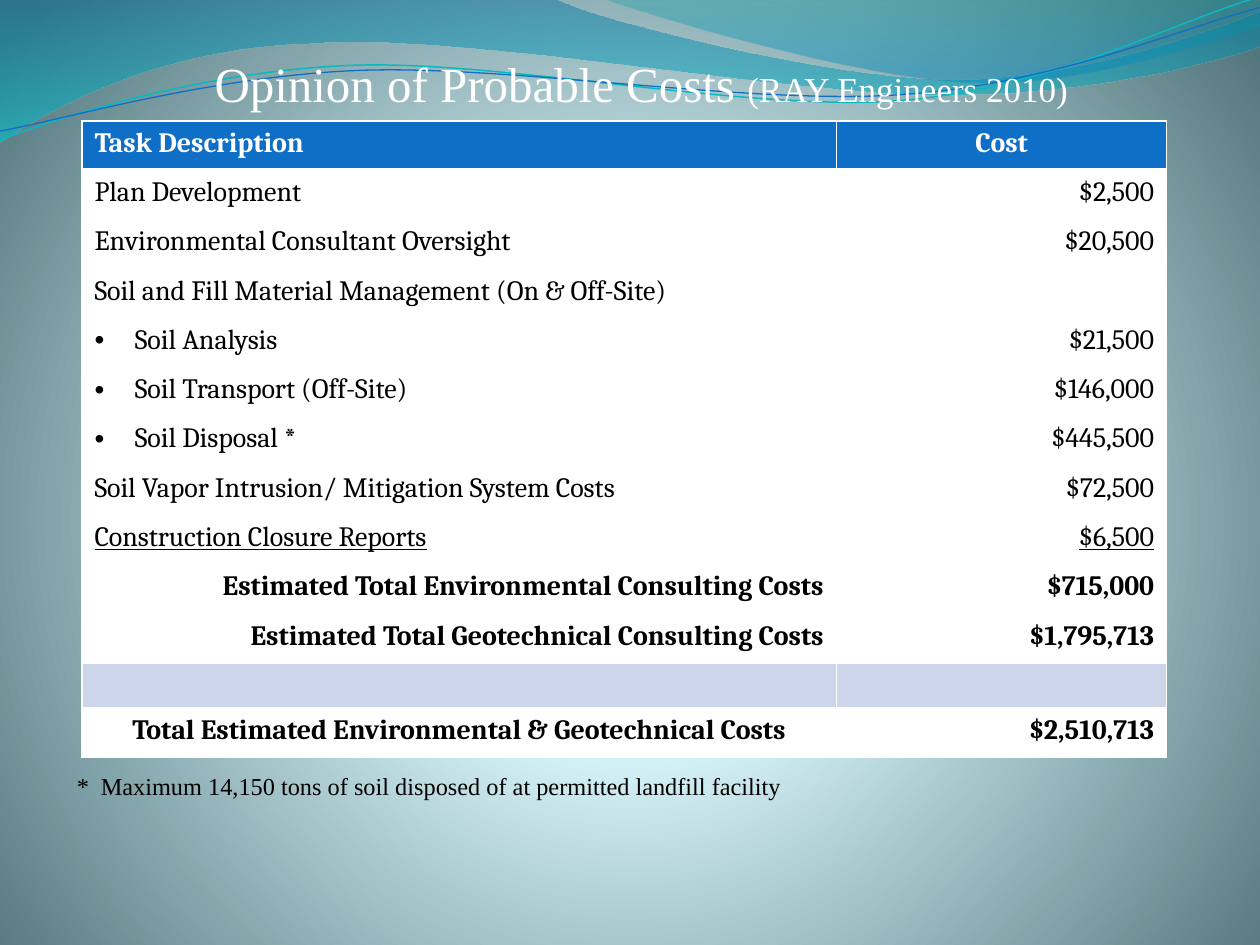
import lxml.etree
import pptx
import pptx.dml.color
import pptx.enum.text
import pptx.oxml.ns
import pptx.util

RGB = pptx.dml.color.RGBColor
Inches = pptx.util.Inches
Pt = pptx.util.Pt
qn = pptx.oxml.ns.qn
ALIGN = pptx.enum.text.PP_ALIGN
ANCHOR = pptx.enum.text.MSO_ANCHOR

WHITE = RGB(0xFF, 0xFF, 0xFF)
BLACK = RGB(0x00, 0x00, 0x00)
BLUE = RGB(0x0F, 0x6F, 0xC6)
TURQUOISE = RGB(0x0A, 0xB8, 0xBF)
PALE_BLUE = RGB(0xCC, 0xD5, 0xEA)
# Gradient stops: position, colour, opacity (all in percent)
BACKDROP = [(0, RGB(0xDE, 0xFB, 0xFF), 100), (25, RGB(0xDD, 0xFA, 0xFF), 100),
            (100, RGB(0x52, 0x76, 0x7C), 100)]
WAVE = [(0, RGB(0x00, 0x74, 0xA1), 45), (100, RGB(0x00, 0xC6, 0xCF), 55)]
CREST = [(0, RGB(0x00, 0xA1, 0xA9), 30), (80, RGB(0x00, 0x8B, 0xBF), 45)]

BODY_FONT, TITLE_FONT = "Cambria", "Times New Roman"
ROW_HEIGHT, SPACER_HEIGHT = Pt(28.15), Pt(25.6)
COLUMN_WIDTHS = (5.99, 2.62)
HANG = 0.32

# Description, cost, style
COSTS = [
    ("Task Description", "Cost", "header"),
    ("Plan Development", "$2,500", "item"),
    ("Environmental Consultant Oversight", "$20,500", "item"),
    ("Soil and Fill Material Management (On & Off-Site)", "", "item"),
    ("Soil Analysis", "$21,500", "bullet"),
    ("Soil Transport (Off-Site)", "$146,000", "bullet"),
    ("Soil Disposal *", "$445,500", "bullet"),
    ("Soil Vapor Intrusion/ Mitigation System Costs", "$72,500", "item"),
    ("Construction Closure Reports", "$6,500", "last item"),
    ("Estimated Total Environmental Consulting Costs", "$715,000", "subtotal"),
    ("Estimated Total Geotechnical Consulting Costs", "$1,795,713", "subtotal"),
    ("", "", "spacer"),
    ("Total Estimated Environmental & Geotechnical Costs", "$2,510,713", "total"),
]
FILLS = {"header": BLUE, "spacer": PALE_BLUE}
BOLD = ("header", "subtotal", "total")
ALIGNMENTS = {"header": (ALIGN.LEFT, ALIGN.CENTER),
              "subtotal": (ALIGN.RIGHT, ALIGN.RIGHT),
              "total": (ALIGN.CENTER, ALIGN.RIGHT)}


def child(parent, tag, **attributes):
    node = lxml.etree.SubElement(parent, qn(tag))
    for name, value in attributes.items():
        node.set(name, str(value))
    return node


def set_gradient(fill, owner, stops, radial=False):
    fill.gradient()
    gradient = next(owner.iter(qn("a:gradFill")))
    for old in list(gradient):
        gradient.remove(old)
    stop_list = child(gradient, "a:gsLst")
    for position, colour, opacity in stops:
        stop = child(stop_list, "a:gs", pos=position * 1000)
        child(child(stop, "a:srgbClr", val=colour), "a:alpha", val=opacity * 1000)
    if radial:
        focus = child(gradient, "a:path", path="circle")
        child(focus, "a:fillToRect", l=10000, t=110000, r=10000, b=100000)
    else:
        child(gradient, "a:lin", ang=5400000, scaled=1)


def add_outline(slide, start, segments, closed):
    """Draw segments of one point (a line) or three points (a curve)."""
    points = [start] + [point for segment in segments for point in segment]
    emu = [(Inches(x), Inches(y)) for x, y in points]
    builder = slide.shapes.build_freeform(*emu[0], scale=1.0)
    builder.add_line_segments(emu[1:], close=closed)
    outline = builder.convert_to_shape()
    outline.shadow.inherit = False
    lines = iter(list(outline.element.iter(qn("a:lnTo"))))
    for segment in segments:
        steps = [next(lines) for _ in segment]
        if len(steps) == 3:
            curve = lxml.etree.Element(qn("a:cubicBezTo"))
            steps[0].addprevious(curve)
            for step in steps:
                curve.append(step[0])
                step.getparent().remove(step)
    return outline


def add_wave(slide, start, segments, stops):
    wave = add_outline(slide, start, segments, True)
    set_gradient(wave.fill, wave.element, stops)
    wave.line.fill.background()


def add_ripple(slide, start, segments, colour, width):
    ripple = add_outline(slide, start, segments, False)
    ripple.fill.background()
    ripple.line.color.rgb = colour
    ripple.line.width = Pt(width)


def add_waves(slide):
    add_wave(slide, (0, 0), [
        [(4.4, -0.01)],
        [(4.76, 0.17), (6.64, 0.63), (7.58, 0.63)],
        [(8.53, 0.63), (9.58, 0.26), (10, 0.09)],
        [(10.01, 0.36)],
        [(9.83, 0.44), (8.7, 0.76), (7.46, 0.75)],
        [(6.22, 0.75), (3.82, 0.28), (2.57, 0.34)],
        [(1.29, 0.36), (0.46, 0.83), (-0.01, 1.13)]], WAVE)
    add_wave(slide, (4.79, -0.01), [
        [(5.09, 0.11), (6.82, 0.62), (7.69, 0.65)],
        [(8.56, 0.69), (9.61, 0.32), (10, 0.21)],
        [(10, 0)]], CREST)
    add_ripple(slide, (0, 1.11), [
        [(0.48, 0.93), (1.58, 0.57), (2.77, 0.52)],
        [(3.95, 0.47), (5.93, 0.89), (7.13, 0.8)],
        [(8.33, 0.71), (9.38, 0.15), (9.98, -0.02)]], TURQUOISE, 0.85)
    add_ripple(slide, (0, 1.04), [
        [(0.47, 0.96), (1.64, 0.61), (2.83, 0.56)],
        [(4.03, 0.51), (5.97, 0.84), (7.17, 0.75)],
        [(8.36, 0.67), (9.41, 0.21), (10, 0.06)]], BLUE, 0.75)


def style_run(run, font, size, colour):
    run.font.name, run.font.size = font, Pt(size)
    run.font.color.rgb = colour


def set_borders(cell, bottom_width):
    properties = cell._tc.get_or_add_tcPr()
    widths = {"a:lnL": 1, "a:lnR": 1, "a:lnT": 1, "a:lnB": bottom_width}
    for index, (side, width) in enumerate(widths.items()):
        border = child(properties, side, w=Pt(width))
        child(child(border, "a:solidFill"), "a:srgbClr", val=WHITE)
        properties.insert(index, border)


def fill_cell(cell, text, style, column):
    cell.fill.solid()
    cell.fill.fore_color.rgb = FILLS.get(style, WHITE)
    set_borders(cell, 3 if style == "header" else 1)
    cell.text_frame.text = text
    paragraph = cell.text_frame.paragraphs[0]
    paragraph.alignment = ALIGNMENTS.get(style, (ALIGN.LEFT, ALIGN.RIGHT))[column]
    if not text:
        child(paragraph._p, "a:endParaRPr", sz=1200)
    if style == "bullet" and column == 0:
        properties = paragraph._p.get_or_add_pPr()
        properties.set("marL", str(Inches(HANG)))
        properties.set("indent", str(-Inches(HANG)))
        child(properties, "a:buFont", typeface="Arial")
        child(properties, "a:buChar", char="•")
    for run in paragraph.runs:
        style_run(run, BODY_FONT, 16, WHITE if style == "header" else BLACK)
        run.font.bold = style in BOLD
        run.font.underline = style == "last item"


def add_cost_table(slide):
    heights = [SPACER_HEIGHT if style == "spacer" else ROW_HEIGHT for _, _, style in COSTS]
    costs = slide.shapes.add_table(
        len(COSTS), len(COLUMN_WIDTHS), Inches(0.65), Inches(0.96),
        Inches(sum(COLUMN_WIDTHS)), sum(heights)).table
    costs.horz_banding = False
    for column, width in zip(costs.columns, COLUMN_WIDTHS):
        column.width = Inches(width)
    for index, (*texts, style) in enumerate(COSTS):
        costs.rows[index].height = heights[index]
        for column, text in enumerate(texts):
            fill_cell(costs.cell(index, column), text, style, column)


def set_frame(frame):
    frame.word_wrap = True
    frame.auto_size = pptx.enum.text.MSO_AUTO_SIZE.NONE
    frame.vertical_anchor = ANCHOR.BOTTOM
    frame.margin_left = frame.margin_right = frame.margin_bottom = 0
    frame.margin_top = Inches(0.05)


def add_footnote(slide, text):
    footnote = slide.shapes.add_textbox(Inches(0.61), Inches(5.91), Inches(5.96), Inches(0.44))
    set_frame(footnote.text_frame)
    footnote.text_frame.text = text
    paragraph = footnote.text_frame.paragraphs[0]
    properties = paragraph._p.get_or_add_pPr()
    child(child(properties, "a:tabLst"), "a:tab", pos=Inches(0.19), algn="l")
    paragraph.line_spacing = 0.8
    style_run(paragraph.runs[0], TITLE_FONT, 13.9, BLACK)


def set_title(slide, heading, source):
    title = slide.shapes.title
    title.left, title.top, title.width, title.height = map(Inches, (0.59, 0.33, 9, 0.56))
    set_frame(title.text_frame)
    paragraph = title.text_frame.paragraphs[0]
    paragraph.alignment = ALIGN.CENTER
    for text, size in ((heading, 28), (source, 20)):
        run = paragraph.add_run()
        run.text = text
        style_run(run, TITLE_FONT, size, WHITE)
    # Bring the title in front of the waves
    title.element.getparent().append(title.element)


def main():
    deck = pptx.Presentation()
    deck.slide_width, deck.slide_height = Inches(10), Inches(7.5)
    slide = deck.slides.add_slide(deck.slide_layouts.get_by_name("Title Only"))
    set_gradient(slide.background.fill, slide.element, BACKDROP, radial=True)
    add_waves(slide)
    add_cost_table(slide)
    add_footnote(slide, "*\tMaximum 14,150 tons of soil disposed of at permitted landfill facility")
    set_title(slide, "Opinion of Probable Costs ", "(RAY Engineers 2010)")
    deck.save("out.pptx")


if __name__ == "__main__":
    main()
